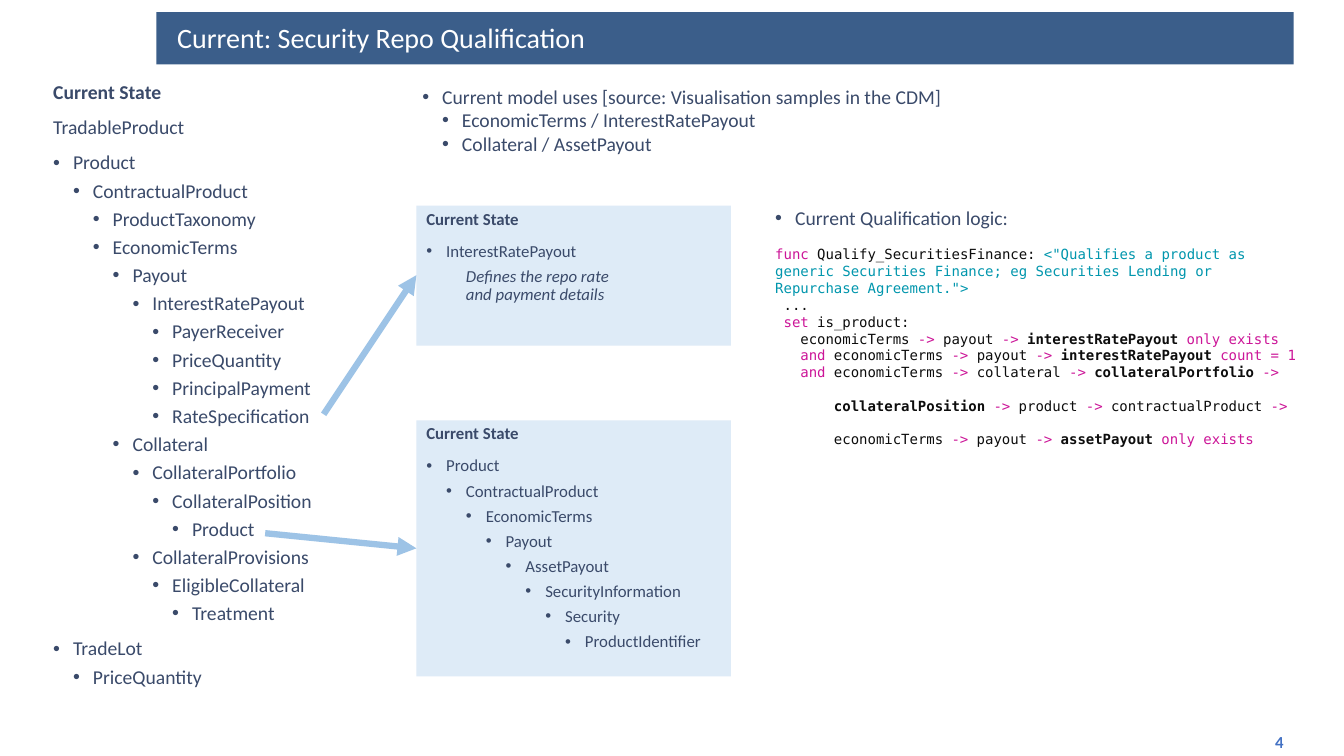
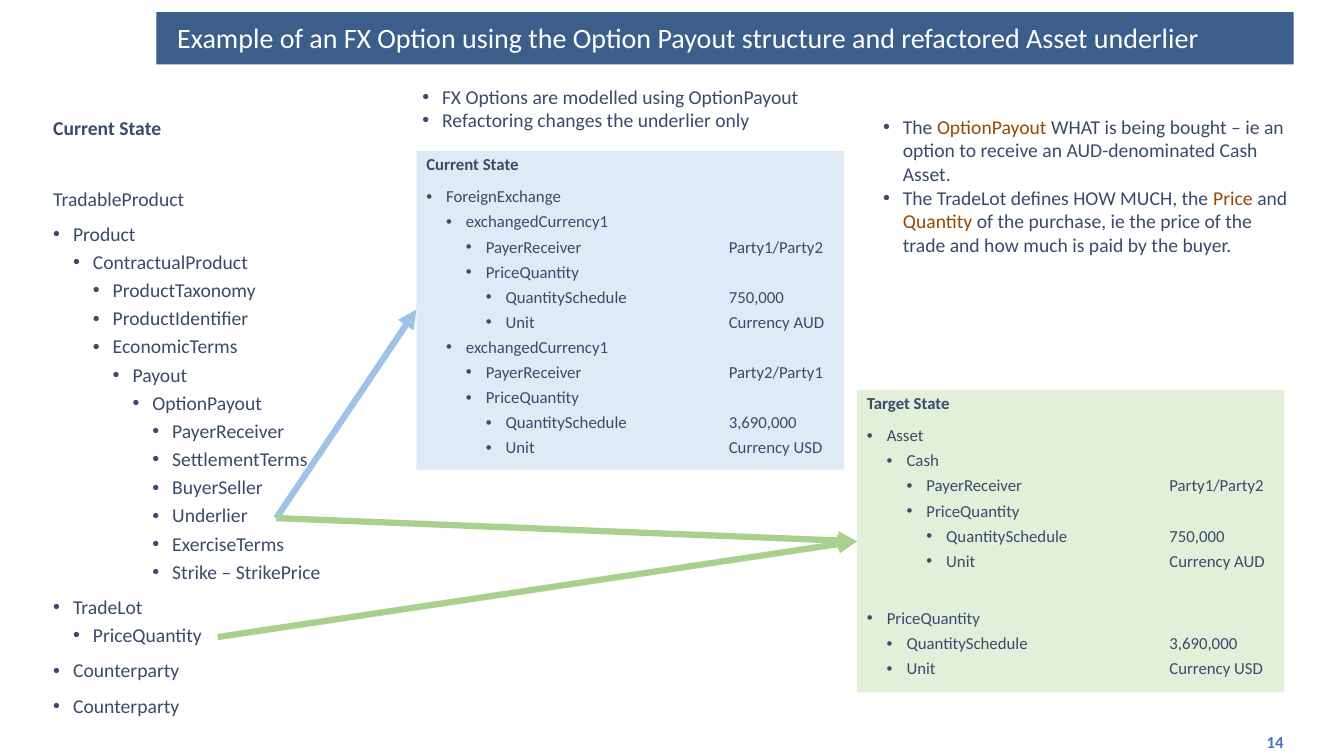
from itertools import groupby

from lxml import etree
from pptx import Presentation
from pptx.dml.color import RGBColor
from pptx.enum.shapes import MSO_CONNECTOR, MSO_SHAPE
from pptx.enum.text import MSO_ANCHOR, PP_ALIGN
from pptx.oxml.ns import qn
from pptx.util import Inches, Pt

COLORS = {
    "band": "3B5E8A",
    "white": "FFFFFF",
    "text": "3A4A6A",
    "number": "4472C4",
    "current": "DEEBF7",
    "target": "E2F0D9",
    "current_arrow": "9DC3E6",
    "target_arrow": "A9D18E",
    "accent": "984807",
    "keyword": "CC1598",
    "code": "0D0D0D",
    "string": "0096AD",
}
BODY_FONT = "Calibri"
CODE_FONT = "DejaVu Sans Mono"
INDENT = 0.59 / 3
VALUE_TAB = 3
KEYWORDS = {"func", "set", "and", "->", "only", "exists", "count", "=", "1"}
CODE_NAMES = {"interestRatePayout", "collateralPortfolio", "collateralPosition", "assetPayout"}

SECURITY_TREE = [
    (0, "Product"),
    (1, "ContractualProduct"),
    (2, "ProductTaxonomy"),
    (2, "EconomicTerms"),
    (3, "Payout"),
    (4, "InterestRatePayout"),
    (5, "PayerReceiver"),
    (5, "PriceQuantity"),
    (5, "PrincipalPayment"),
    (5, "RateSpecification"),
    (3, "Collateral"),
    (4, "CollateralPortfolio"),
    (5, "CollateralPosition"),
    (6, "Product"),
    (4, "CollateralProvisions"),
    (5, "EligibleCollateral"),
    (6, "Treatment"),
    (0, "TradeLot"),
    (1, "PriceQuantity"),
]
COLLATERAL_TREE = list(enumerate([
    "Product", "ContractualProduct", "EconomicTerms", "Payout", "AssetPayout",
    "SecurityInformation", "Security", "ProductIdentifier",
]))
OPTION_TREE = [
    (0, "Product"),
    (1, "ContractualProduct"),
    (2, "ProductTaxonomy"),
    (2, "ProductIdentifier"),
    (2, "EconomicTerms"),
    (3, "Payout"),
    (4, "OptionPayout"),
    (5, "PayerReceiver"),
    (5, "SettlementTerms"),
    (5, "BuyerSeller"),
    (5, "Underlier"),
    (5, "ExerciseTerms"),
    (5, "Strike – StrikePrice"),
    (0, "TradeLot"),
    (1, "PriceQuantity"),
    (0, "Counterparty"),
    (0, "Counterparty"),
]
QUALIFICATION_CODE = [
    (12, 'func Qualify_SecuritiesFinance: <"Qualifies a product as generic Securities Finance; '
         'eg Securities Lending or Repurchase Agreement.">'),
    (0, " ..."),
    (0, " set is_product:"),
    (0, "   economicTerms -> payout -> interestRatePayout only exists"),
    (0, "   and economicTerms -> payout -> interestRatePayout count = 1"),
    (0, "   and economicTerms -> collateral -> collateralPortfolio ->"),
    (12, "       collateralPosition -> product -> contractualProduct ->"),
    (12, "       economicTerms -> payout -> assetPayout only exists"),
]


def color(name):
    return RGBColor.from_string(COLORS[name])


def cash_leg(parties, quantity, currency):
    return [
        (2, f"PayerReceiver\t{parties}"),
        (2, "PriceQuantity"),
        (3, f"QuantitySchedule\t{quantity}"),
        (3, f"Unit\tCurrency {currency}"),
    ]


def add_rectangle(slide, box, fill):
    shape = slide.shapes.add_shape(MSO_SHAPE.RECTANGLE, *map(Inches, box))
    shape.shadow.inherit = False
    shape.fill.solid()
    shape.fill.fore_color.rgb = color(fill)
    shape.line.fill.background()
    return prepare_frame(shape, MSO_ANCHOR.TOP)


def add_text_box(slide, box, anchor=MSO_ANCHOR.TOP):
    return prepare_frame(slide.shapes.add_textbox(*map(Inches, box)), anchor)


def prepare_frame(shape, anchor):
    frame = shape.text_frame
    frame.word_wrap = True
    frame.vertical_anchor = anchor
    return frame


def add_run(paragraph, text, size, color_name="text", bold=False, italic=False, font=BODY_FONT):
    run = paragraph.add_run()
    run.text = text
    run.font.name = font
    run.font.size = Pt(size)
    run.font.bold = bold
    run.font.italic = italic
    run.font.color.rgb = color(color_name)


def add_paragraph(frame, before=0, spacing=1.0):
    first = frame.paragraphs[0]
    paragraph = frame.add_paragraph() if first.runs else first
    paragraph.alignment = PP_ALIGN.LEFT
    paragraph.space_before = Pt(before)
    paragraph.line_spacing = spacing
    return paragraph


def indent(paragraph, depth, bullet=True):
    properties = paragraph._p.get_or_add_pPr()
    margin = INDENT * (depth + 1)
    properties.set("marL", str(Inches(margin)))
    properties.set("indent", str(-Inches(INDENT) if bullet else 0))
    if bullet:
        font = etree.SubElement(properties, qn("a:buFont"))
        font.set("typeface", "Arial")
        etree.SubElement(properties, qn("a:buChar")).set("char", "•")
    return properties


def add_tree(frame, items, size, first_gap=10):
    for position, (depth, text) in enumerate(items):
        gap = 5 if depth else 10
        paragraph = add_paragraph(frame, gap if position else first_gap, 0.9)
        properties = indent(paragraph, depth)
        if "\t" in text:
            tabs = etree.SubElement(properties, qn("a:tabLst"))
            tab = etree.SubElement(tabs, qn("a:tab"))
            tab.set("pos", str(Inches(VALUE_TAB)))
            tab.set("algn", "l")
        add_run(paragraph, text, size)


def add_bullets(frame, items):
    for depth, runs in items:
        paragraph = add_paragraph(frame)
        indent(paragraph, depth)
        for text, color_name in runs:
            add_run(paragraph, text, 14, color_name)


def add_state_box(slide, box, heading, fill, items):
    frame = add_rectangle(slide, box, fill)
    add_run(add_paragraph(frame, spacing=0.9), heading, 12, bold=True)
    add_tree(frame, items, 12)
    return frame


def add_product_tree(slide, box, items, lead_gap=10):
    frame = add_text_box(slide, box)
    add_run(add_paragraph(frame, spacing=0.9), "Current State", 14, bold=True)
    add_run(add_paragraph(frame, lead_gap, 0.9), "TradableProduct", 14)
    add_tree(frame, items, 14)


def code_style(token):
    if token in KEYWORDS:
        return "keyword", False
    return "code", token in CODE_NAMES


def add_code(frame, lines):
    for before, line in lines:
        paragraph = add_paragraph(frame, before)
        statement, bracket, description = line.partition("<")
        tokens = statement.split(" ")
        pieces = [token + " " for token in tokens[:-1]] + tokens[-1:]
        styled = groupby(filter(None, pieces), lambda piece: code_style(piece.strip()))
        for (color_name, bold), group in styled:
            add_run(paragraph, "".join(group), 10, color_name, bold, font=CODE_FONT)
        if bracket:
            add_run(paragraph, bracket + description, 10, "string", font=CODE_FONT)


def add_arrow(slide, start, end, color_name):
    connector = slide.shapes.add_connector(
        MSO_CONNECTOR.STRAIGHT, *map(Inches, (*start, *end)))
    connector.line.color.rgb = color(color_name)
    connector.line.width = Pt(4.5)
    line = connector.line._get_or_add_ln()
    etree.SubElement(line, qn("a:tailEnd")).set("type", "triangle")
    etree.SubElement(connector._element.spPr, qn("a:effectLst"))


def add_base_slide(presentation, title, number):
    slide = presentation.slides.add_slide(presentation.slide_layouts[6])
    add_rectangle(slide, (1.55, 0.12, 11.28, 0.52), "band")
    frame = add_text_box(slide, (1.66, 0.18, 10.83, 0.42), MSO_ANCHOR.MIDDLE)
    add_run(add_paragraph(frame, spacing=0.9), title, 20, "white")
    frame = add_text_box(slide, (9.83, 7.21, 3, 0.29), MSO_ANCHOR.MIDDLE)
    paragraph = add_paragraph(frame)
    paragraph.alignment = PP_ALIGN.RIGHT
    add_run(paragraph, str(number), 12, "number", bold=True)
    return slide


def build_security_slide(presentation):
    slide = add_base_slide(presentation, "Current: Security Repo Qualification", 4)
    add_product_tree(slide, (0.43, 0.77, 3.37, 6.37), SECURITY_TREE)
    add_bullets(add_text_box(slide, (4.09, 0.79, 6.42, 0.81)), [
        (0, [("Current model uses [source: Visualisation samples in the CDM]", "text")]),
        (1, [("EconomicTerms / InterestRatePayout", "text")]),
        (1, [("Collateral / AssetPayout", "text")]),
    ])
    payout = add_state_box(slide, (4.13, 2.04, 3.12, 1.39), "Current State", "current",
                           [(0, "InterestRatePayout")])
    definition = add_paragraph(payout, 5, 0.9)
    indent(definition, 1, bullet=False)
    add_run(definition, "Defines the repo rate", 12, italic=True)
    definition.add_line_break()
    add_run(definition, "and payment details", 12, italic=True)
    add_state_box(slide, (4.13, 4.17, 3.12, 2.54), "Current State", "current", COLLATERAL_TREE)
    add_arrow(slide, (3.21, 4.11), (4.13, 2.73), "current_arrow")
    add_arrow(slide, (2.63, 5.29), (4.13, 5.44), "current_arrow")
    logic = add_text_box(slide, (7.59, 1.99, 5.42, 2.19))
    add_bullets(logic, [(0, [("Current Qualification logic:", "text")])])
    add_code(logic, QUALIFICATION_CODE)


def build_option_slide(presentation):
    slide = add_base_slide(
        presentation,
        "Example of an FX Option using the Option Payout structure and refactored Asset underlier",
        14)
    add_product_tree(slide, (0.43, 1.13, 3.07, 6.01), OPTION_TREE, lead_gap=35)
    add_bullets(add_text_box(slide, (4.09, 0.79, 4.29, 0.57)), [
        (0, [("FX Options are modelled using OptionPayout", "text")]),
        (0, [("Refactoring changes the underlier only", "text")]),
    ])
    add_bullets(add_text_box(slide, (8.66, 1.09, 4.24, 1.51)), [
        (0, [("The ", "text"), ("OptionPayout", "accent"),
             (" WHAT is being bought – ie an option to receive an AUD-denominated Cash Asset.",
              "text")]),
        (0, [("The TradeLot defines HOW MUCH, the ", "text"), ("Price", "accent"),
             (" and ", "text"), ("Quantity", "accent"),
             (" of the purchase, ie the price of the trade and how much is paid by the buyer.",
              "text")]),
    ])
    bought = cash_leg("Party1/Party2", "750,000", "AUD")
    sold = cash_leg("Party2/Party1", "3,690,000", "USD")
    exchanged = (1, "exchangedCurrency1")
    add_state_box(slide, (4.13, 1.5, 4.24, 3.16), "Current State", "current",
                  [(0, "ForeignExchange"), exchanged, *bought, exchanged, *sold])
    target = add_state_box(slide, (8.5, 3.87, 4.24, 3), "Target State", "target",
                           [(0, "Asset"), (1, "Cash"), *bought])
    price_quantity = [(depth - 2, text) for depth, text in sold[1:]]
    add_tree(target, price_quantity, 12, first_gap=28)
    add_arrow(slide, (2.74, 5.14), (4.13, 3.07), "current_arrow")
    for start in ((2.74, 5.14), (2.16, 6.32)):
        add_arrow(slide, start, (8.5, 5.37), "target_arrow")


def main():
    presentation = Presentation()
    presentation.slide_width = Inches(13.33)
    presentation.slide_height = Inches(7.5)
    build_security_slide(presentation)
    build_option_slide(presentation)
    presentation.save("out.pptx")


if __name__ == "__main__":
    main()
